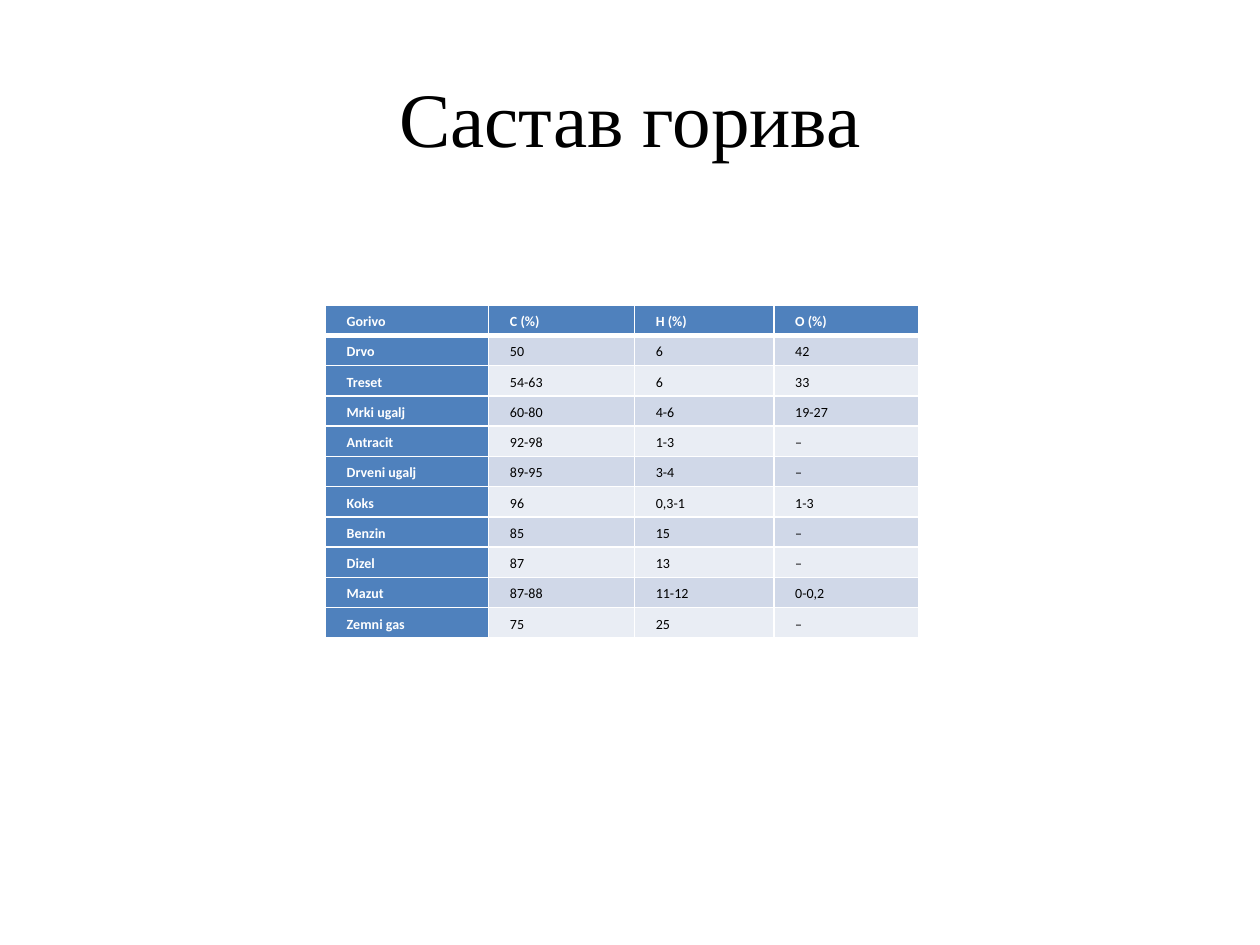
from lxml import etree
from pptx import Presentation
from pptx import util as u
from pptx.dml.color import RGBColor
from pptx.enum import text
from pptx.oxml.ns import qn

COLOURS = {
    "black": "000000",
    "white": "FFFFFF",
    "blue": "4F81BD",
    "band_dark": "D0D8E8",
    "band_light": "E9EDF4",
}

HEADER = ["Gorivo", "C (%)", "H (%)", "O (%)"]
FUELS = [
    ["Drvo", "50", "6", "42"],
    ["Treset", "54-63", "6", "33"],
    ["Mrki ugalj", "60-80", "4-6", "19-27"],
    ["Antracit", "92-98", "1-3", "–"],
    ["Drveni ugalj", "89-95", "3-4", "–"],
    ["Koks", "96", "0,3-1", "1-3"],
    ["Benzin", "85", "15", "–"],
    ["Dizel", "87", "13", "–"],
    ["Mazut", "87-88", "11-12", "0-0,2"],
    ["Zemni gas", "75", "25", "–"],
]
COLUMN_WIDTHS = [3.29, 2.94, 2.81, 2.92]
ROW_HEIGHT = 0.61


class SlideBuilder:
    """Holds the style and the current slide."""

    title_font = "Times New Roman"
    table_font = "Calibri"

    def __init__(self, slide):
        self.slide = slide

    def add_run(self, paragraph, words, font, size, colour, bold=False):
        run = paragraph.add_run()
        run.text = words
        run.font.name = font
        run.font.size = u.Pt(size)
        run.font.bold = bold
        run.font.color.rgb = RGBColor.from_string(COLOURS[colour])

    def add_title(self, words, left, top, width, height):
        shape = self.slide.shapes.add_textbox(
            u.Cm(left), u.Cm(top), u.Cm(width), u.Cm(height))
        frame = shape.text_frame
        frame.word_wrap = True
        frame.vertical_anchor = text.MSO_ANCHOR.MIDDLE
        paragraph = frame.paragraphs[0]
        paragraph.alignment = text.PP_ALIGN.CENTER
        self.add_run(paragraph, words, self.title_font, 44, "black")

    def add_borders(self, cell, top, bottom):
        properties = cell._tc.get_or_add_tcPr()
        for side, points in (("L", 1), ("R", 1), ("T", top), ("B", bottom)):
            line = etree.SubElement(
                properties, qn(f"a:ln{side}"), w=str(u.Pt(points)))
            fill = etree.SubElement(line, qn("a:solidFill"))
            etree.SubElement(fill, qn("a:srgbClr"), val=COLOURS["white"])

    def fill_cell(self, cell, words, row, column):
        heading = row == 0 or column == 0
        # The line under the header row is thicker
        self.add_borders(cell, top=3 if row == 1 else 1,
                         bottom=3 if row == 0 else 1)
        band = "band_dark" if row % 2 else "band_light"
        cell.fill.solid()
        cell.fill.fore_color.rgb = RGBColor.from_string(
            COLOURS["blue" if heading else band])
        cell.margin_left = cell.margin_right = u.Cm(0.43)
        cell.margin_top = cell.margin_bottom = u.Cm(0.1)
        cell.vertical_anchor = text.MSO_ANCHOR.BOTTOM
        paragraph = cell.text_frame.paragraphs[0]
        paragraph.line_spacing = 1.15
        self.add_run(paragraph, words, self.table_font, 8,
                     "white" if heading else "black", heading)

    def add_table(self, rows, left, top, widths, row_height):
        frame = self.slide.shapes.add_table(
            len(rows), len(widths), u.Cm(left), u.Cm(top),
            u.Cm(sum(widths)), u.Cm(row_height * len(rows)))
        table = frame.table
        table.first_col = True
        for column, width in zip(table.columns, widths):
            column.width = u.Cm(width)
        for row, values in enumerate(rows):
            table.rows[row].height = u.Cm(row_height)
            for column, words in enumerate(values):
                self.fill_cell(table.cell(row, column), words, row, column)


def main():
    presentation = Presentation()
    presentation.slide_width = u.Cm(25.4)
    presentation.slide_height = u.Cm(19.05)
    slide = presentation.slides.add_slide(presentation.slide_layouts[6])
    builder = SlideBuilder(slide)

    # Title
    builder.add_title("Састав горива", 1.27, 0.76, 22.86, 3.18)

    # Fuel composition table
    builder.add_table([HEADER] + FUELS, 6.56, 6.15, COLUMN_WIDTHS, ROW_HEIGHT)

    presentation.save("out.pptx")


if __name__ == "__main__":
    main()
